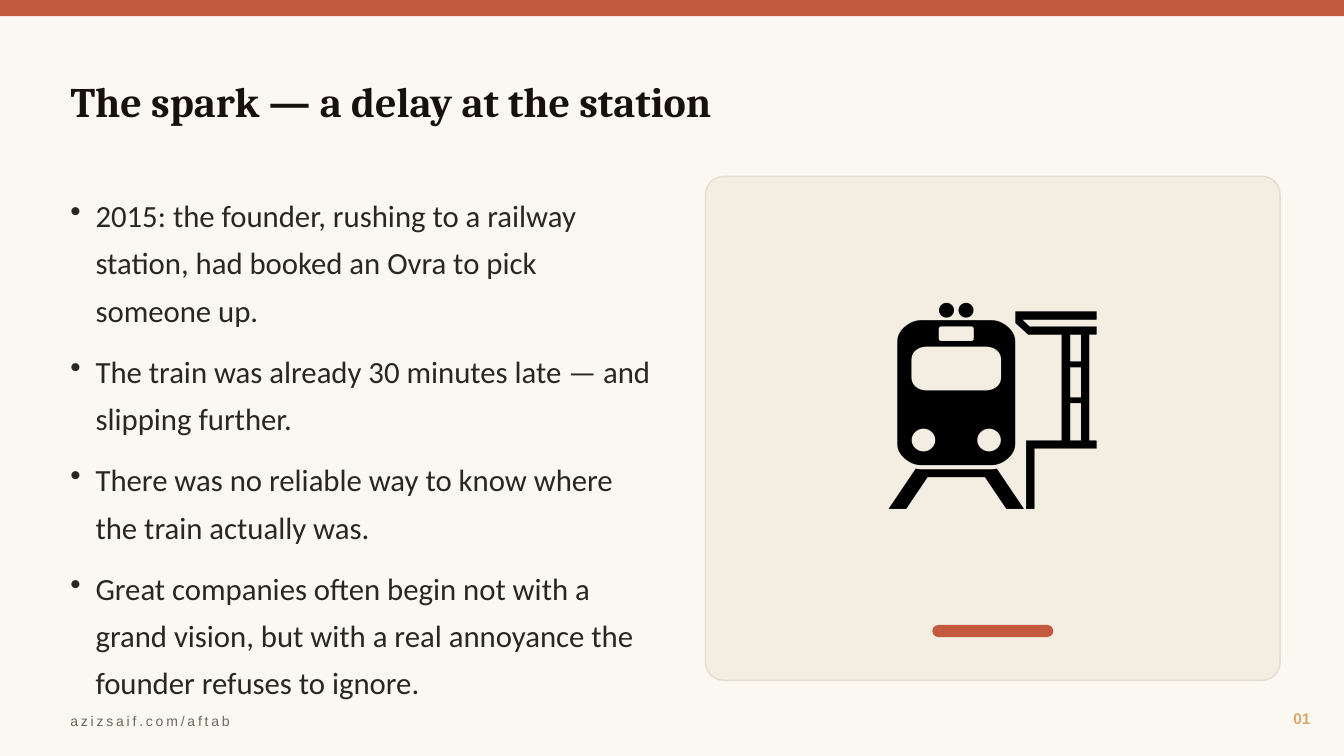
from lxml import etree
from pptx import Presentation
from pptx.dml.color import RGBColor
from pptx.enum.shapes import MSO_SHAPE
from pptx.enum.text import MSO_ANCHOR, MSO_AUTO_SIZE, PP_ALIGN
from pptx.oxml.ns import qn
from pptx.util import Pt

RECTANGLE, ROUNDED = MSO_SHAPE.RECTANGLE, MSO_SHAPE.ROUNDED_RECTANGLE
TOP, MIDDLE = MSO_ANCHOR.TOP, MSO_ANCHOR.MIDDLE
LEFT, CENTER, RIGHT = PP_ALIGN.LEFT, PP_ALIGN.CENTER, PP_ALIGN.RIGHT
NO_AUTOFIT = MSO_AUTO_SIZE.NONE
TITLE_ONLY = 5

WIDTH, HEIGHT = 960, 540
MARGIN = 43.2
COLORS = {
    "background": "FBF7F1",
    "accent": "C45A3D",
    "title": "16110D",
    "body": "2A2622",
    "card": "F4EDE2",
    "card_line": "E4DDD0",
    "icon": "000000",
    "number": "D9A86C",
    "footer": "6E665C",
}
BULLETS = [
    "2015: the founder, rushing to a railway station, had booked an Ovra to pick someone up.",
    "The train was already 30 minutes late — and slipping further.",
    "There was no reliable way to know where the train actually was.",
    "Great companies often begin not with a grand vision, but with a real annoyance "
    "the founder refuses to ignore.",
]


def color(name):
    return RGBColor.from_string(COLORS[name])


def add_block(slide, kind, box, fill, line=None, radius=None):
    shape = slide.shapes.add_shape(kind, *map(Pt, box))
    shape.shadow.inherit = False
    shape.fill.solid()
    shape.fill.fore_color.rgb = color(fill)
    if line:
        shape.line.color.rgb = color(line)
        shape.line.width = Pt(1)
    else:
        shape.line.fill.background()
    if radius is not None:
        shape.adjustments[0] = radius


def set_bullet(paragraph, indent):
    properties = paragraph._p.get_or_add_pPr()
    properties.set("marL", str(Pt(indent)))
    properties.set("indent", str(-Pt(indent)))
    etree.SubElement(properties, qn("a:buChar")).set("char", "•")


def write(frame, *texts, size, font, ink, bold=False, align=LEFT, anchor=MIDDLE,
          tracking=0, indent=0, line_spacing=None, space_after=None):
    """Fill a text frame with one paragraph per text; an indent makes them bullets."""
    frame.word_wrap = True
    frame.auto_size = NO_AUTOFIT
    frame.vertical_anchor = anchor
    for index, text in enumerate(texts):
        paragraph = frame.add_paragraph() if index else frame.paragraphs[0]
        if indent:
            set_bullet(paragraph, indent)
        paragraph.alignment = align
        if line_spacing:
            paragraph.line_spacing = line_spacing
        if space_after:
            paragraph.space_after = Pt(space_after)
        run = paragraph.add_run()
        run.text = text
        run.font.size = Pt(size)
        run.font.name = font
        run.font.bold = bold
        run.font.color.rgb = color(ink)
        if tracking:
            run.font._element.set("spc", str(tracking * 100))


def add_text(slide, box, *texts, **text_format):
    write(slide.shapes.add_textbox(*map(Pt, box)).text_frame, *texts, **text_format)


def place_title(slide, box, text):
    title = slide.shapes.title
    title.left, title.top, title.width, title.height = map(Pt, box)
    write(title.text_frame, text, size=30, font="Cambria", ink="title", bold=True)


def add_icon_card(slide, box, icon):
    left, top, width, height = box
    bar_width, bar_height = 86.4, 8.64
    add_block(slide, ROUNDED, box, "card", line="card_line", radius=0.036)
    add_text(slide, (left, top, width, height * 0.82), icon,
             size=150, font="Calibri", ink="icon", align=CENTER)
    bar_left = left + (width - bar_width) / 2
    add_block(slide, ROUNDED, (bar_left, top + height * 0.89, bar_width, bar_height),
              "accent", radius=0.5)


def add_footer(slide, box, address, number):
    left, top, width, height = box
    number_width = 64.8
    add_text(slide, (left + width - number_width, top, number_width, 25.2), number,
             size=11, font="Arial", ink="number", bold=True, align=RIGHT)
    add_text(slide, (left, top + 3.6, 576, height - 3.6), address,
             size=10, font="Arial", ink="footer", tracking=2)


def build_story_slide(presentation):
    slide = presentation.slides.add_slide(presentation.slide_layouts[TITLE_ONLY])
    slide.background.fill.solid()
    slide.background.fill.fore_color.rgb = color("background")
    add_block(slide, RECTANGLE, (0, 0, WIDTH, 11.52), "accent")
    place_title(slide, (MARGIN, 36, 871.2, 72), "The spark — a delay at the station")
    add_icon_card(slide, (504, 126, 410.4, 360), "🚉")
    add_text(slide, (MARGIN, 129.6, 432, 360), *BULLETS, size=22, font="Calibri", ink="body",
             anchor=TOP, indent=18, line_spacing=1.28, space_after=10)
    add_footer(slide, (MARGIN, 500.4, 900, 25.2), "azizsaif.com/aftab", "01")


def main():
    presentation = Presentation()
    presentation.slide_width, presentation.slide_height = Pt(WIDTH), Pt(HEIGHT)
    build_story_slide(presentation)
    presentation.save("out.pptx")


if __name__ == "__main__":
    main()
